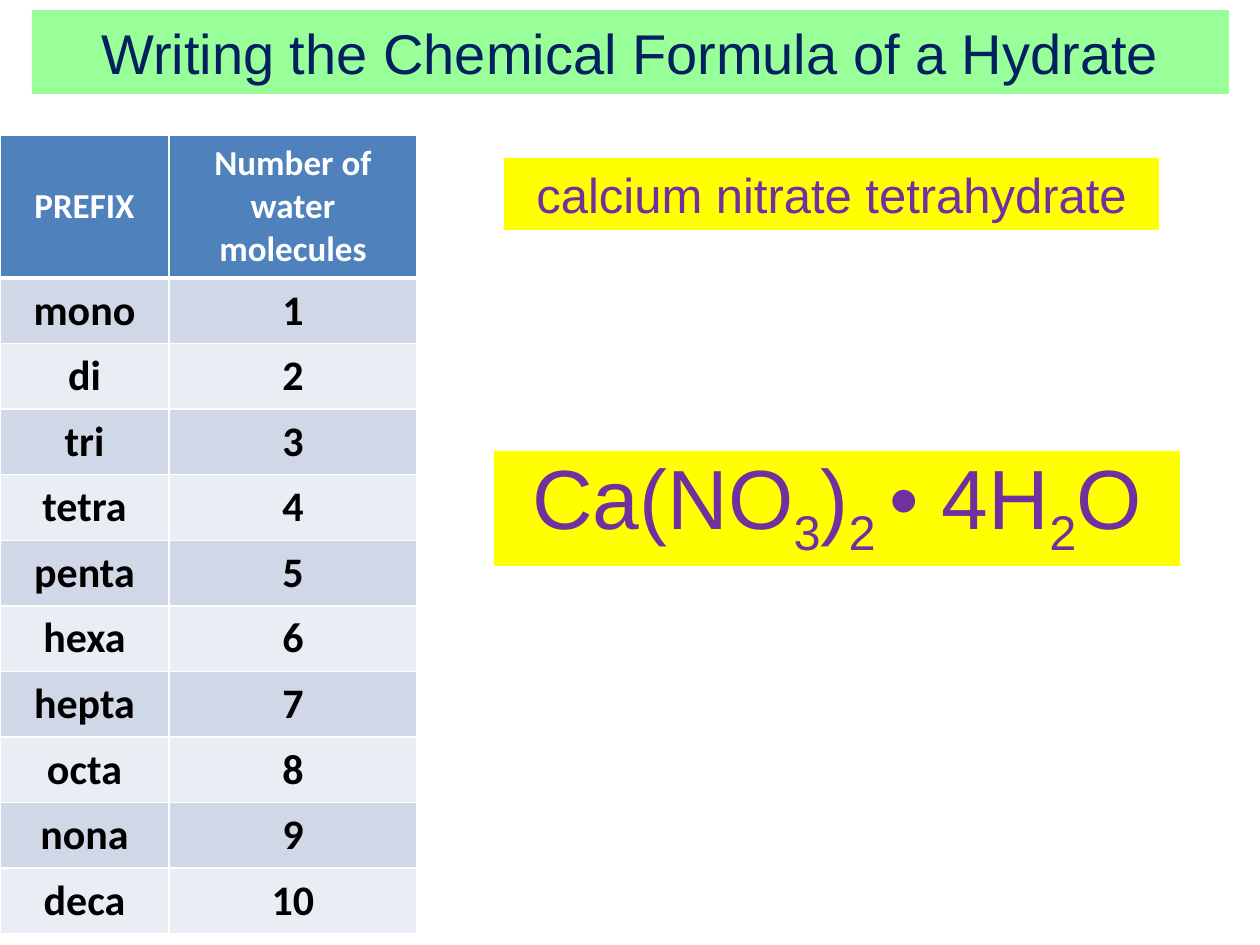
from dataclasses import dataclass

from lxml import etree
from pptx import Presentation
from pptx import util as u
from pptx.dml.color import RGBColor
from pptx.enum import shapes, text
from pptx.oxml import parse_xml
from pptx.oxml.ns import nsdecls, qn

EMU_PER_PX = 914400 / 126


@dataclass(frozen=True)
class Theme:
    banner: str = "99FF99"
    navy: str = "002060"
    highlight: str = "FFFF00"
    purple: str = "7030A0"
    header: str = "4F81BD"
    bands: tuple = ("D0D8E8", "E9EDF4")
    white: str = "FFFFFF"
    black: str = "000000"
    heading_font: str = "Arial"
    table_font: str = "Calibri"
    title_size: int = 32
    name_size: int = 28
    formula_size: int = 48
    header_size: int = 20
    body_size: int = 24


THEME = Theme()
PREFIXES = ["mono", "di", "tri", "tetra", "penta",
            "hexa", "hepta", "octa", "nona", "deca"]
FORMULA = [("Ca(NO", False), ("3", True), (")", False), ("2 ", True),
           ("• 4H", False), ("2", True), ("O", False)]


def px(length):
    return u.Emu(round(length * EMU_PER_PX))


def place(shape, left, top, width, height):
    frame = {"left": left, "top": top, "width": width, "height": height}
    for name, value in frame.items():
        setattr(shape, name, px(value))


def paint(target, color):
    target.fill.solid()
    target.fill.fore_color.rgb = RGBColor.from_string(color)


def add_span(para, words, color, **font_format):
    span = para.add_run()
    span.text = words
    for name, value in font_format.items():
        setattr(span.font, name, value)
    span.font.color.rgb = RGBColor.from_string(color)
    return span


def outline_text(span):
    """Give the letters a thin white edge."""
    line = parse_xml(
        f'<a:ln {nsdecls("a")} w="{u.Pt(1.4)}"><a:solidFill>'
        f'<a:srgbClr val="{THEME.white}"/></a:solidFill></a:ln>')
    span.font._element.insert(0, line)


def add_title(page, words):
    title = page.shapes.title
    place(title, 32, 10, 1197, 84)
    paint(title, THEME.banner)
    frame = title.text_frame
    frame.vertical_anchor = text.MSO_ANCHOR.MIDDLE
    frame.auto_size = text.MSO_AUTO_SIZE.NONE
    para = frame.paragraphs[0]
    para.alignment = text.PP_ALIGN.CENTER
    add_span(para, words, THEME.navy, name=THEME.heading_font,
             size=u.Pt(THEME.title_size))


def add_highlight(page, bounds, parts, size):
    """Add a yellow box; each part is (words, is_subscript)."""
    box = page.shapes.add_shape(shapes.MSO_SHAPE.RECTANGLE, *map(px, bounds))
    box.shadow.inherit = False
    paint(box, THEME.highlight)
    box.line.fill.background()
    frame = box.text_frame
    frame.word_wrap = True
    frame.auto_size = text.MSO_AUTO_SIZE.SHAPE_TO_FIT_TEXT
    frame.vertical_anchor = text.MSO_ANCHOR.BOTTOM
    para = frame.paragraphs[0]
    para.alignment = text.PP_ALIGN.CENTER
    for words, is_subscript in parts:
        span = add_span(para, words, THEME.purple,
                        name=THEME.heading_font, size=u.Pt(size))
        outline_text(span)
        if is_subscript:
            span.font._element.set("baseline", "-25000")


def set_borders(cell, bottom_width):
    properties = cell._tc.get_or_add_tcPr()
    widths = {"lnL": 1, "lnR": 1, "lnT": 1, "lnB": bottom_width}
    for position, (tag, width) in enumerate(widths.items()):
        line = etree.Element(qn(f"a:{tag}"), w=str(u.Pt(width)))
        fill = etree.SubElement(line, qn("a:solidFill"))
        etree.SubElement(fill, qn("a:srgbClr"), val=THEME.white)
        properties.insert(position, line)


def fill_cell(cell, words, fill, color, size, bottom_width):
    paint(cell, fill)
    set_borders(cell, bottom_width)
    cell.vertical_anchor = text.MSO_ANCHOR.MIDDLE
    para = cell.text_frame.paragraphs[0]
    para.alignment = text.PP_ALIGN.CENTER
    add_span(para, words, color, name=THEME.table_font,
             size=u.Pt(size), bold=True)


def add_prefix_table(page):
    rows = [("PREFIX", "Number of water molecules")]
    rows += [(prefix, str(count)) for count, prefix in enumerate(PREFIXES, 1)]
    widths = (169, 248)
    header_height, body_height = 143, 656
    table = page.shapes.add_table(
        len(rows), len(widths), px(0), px(135), px(sum(widths)),
        px(header_height + body_height)).table
    for column, width in zip(table.columns, widths):
        column.width = px(width)
    for index, values in enumerate(rows):
        if index == 0:
            height = header_height
            style = (THEME.header, THEME.white, THEME.header_size, 3)
        else:
            height = body_height / len(PREFIXES)
            band = THEME.bands[(index - 1) % 2]
            style = (band, THEME.black, THEME.body_size, 1)
        table.rows[index].height = px(height)
        for cell, words in zip(table.rows[index].cells, values):
            fill_cell(cell, words, *style)


def main():
    deck = Presentation()
    deck.slide_width, deck.slide_height = px(1260), px(945)
    page = deck.slides.add_slide(deck.slide_layouts[5])
    add_highlight(page, (494, 451, 686, 115), FORMULA, THEME.formula_size)
    add_highlight(page, (504, 158, 655, 72),
                  [("calcium nitrate tetrahydrate", False)], THEME.name_size)
    add_prefix_table(page)
    add_title(page, "Writing the Chemical Formula of a Hydrate")
    deck.save("out.pptx")


if __name__ == "__main__":
    main()
